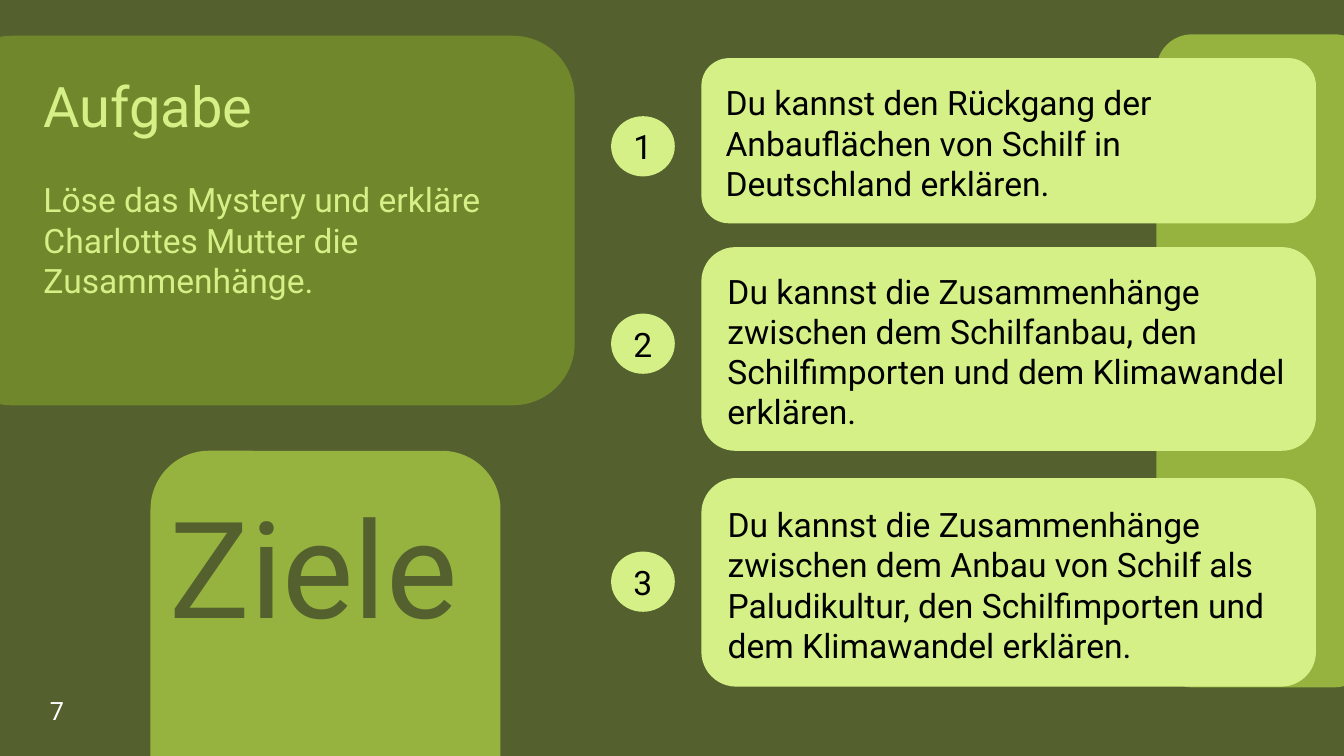
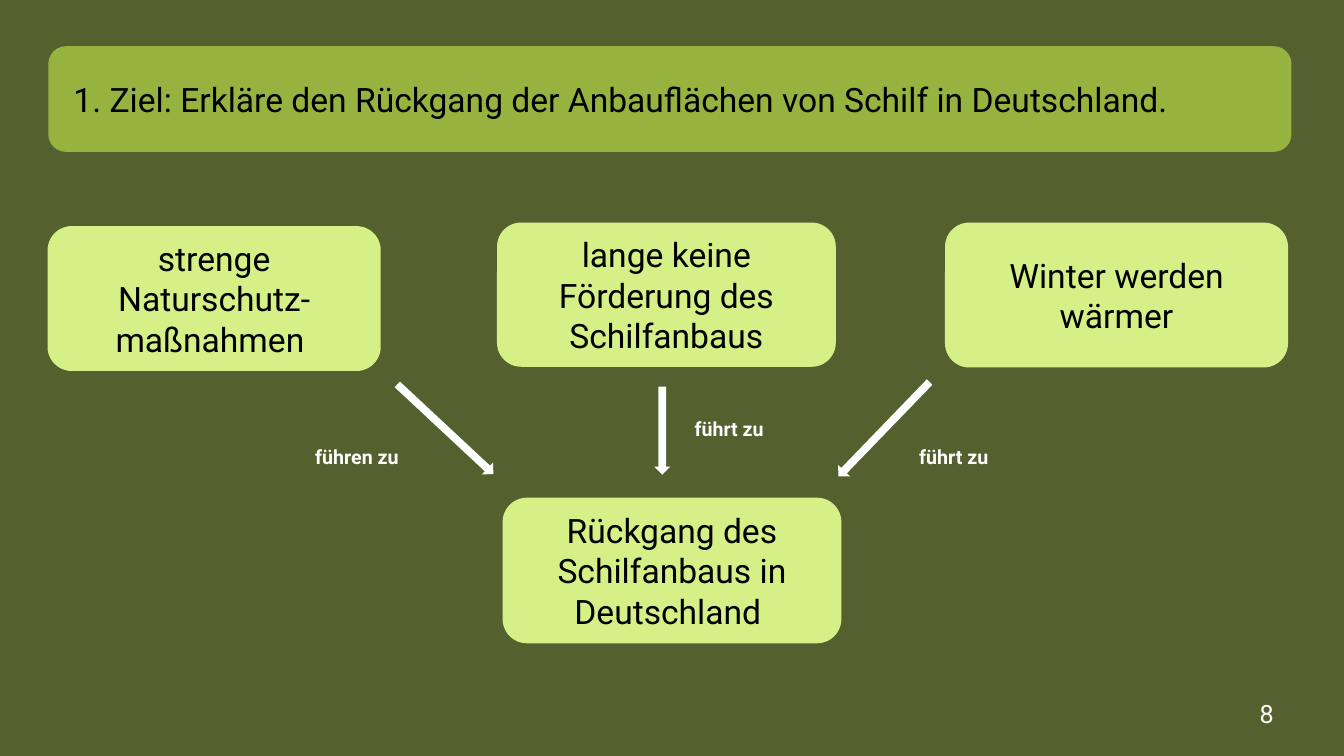
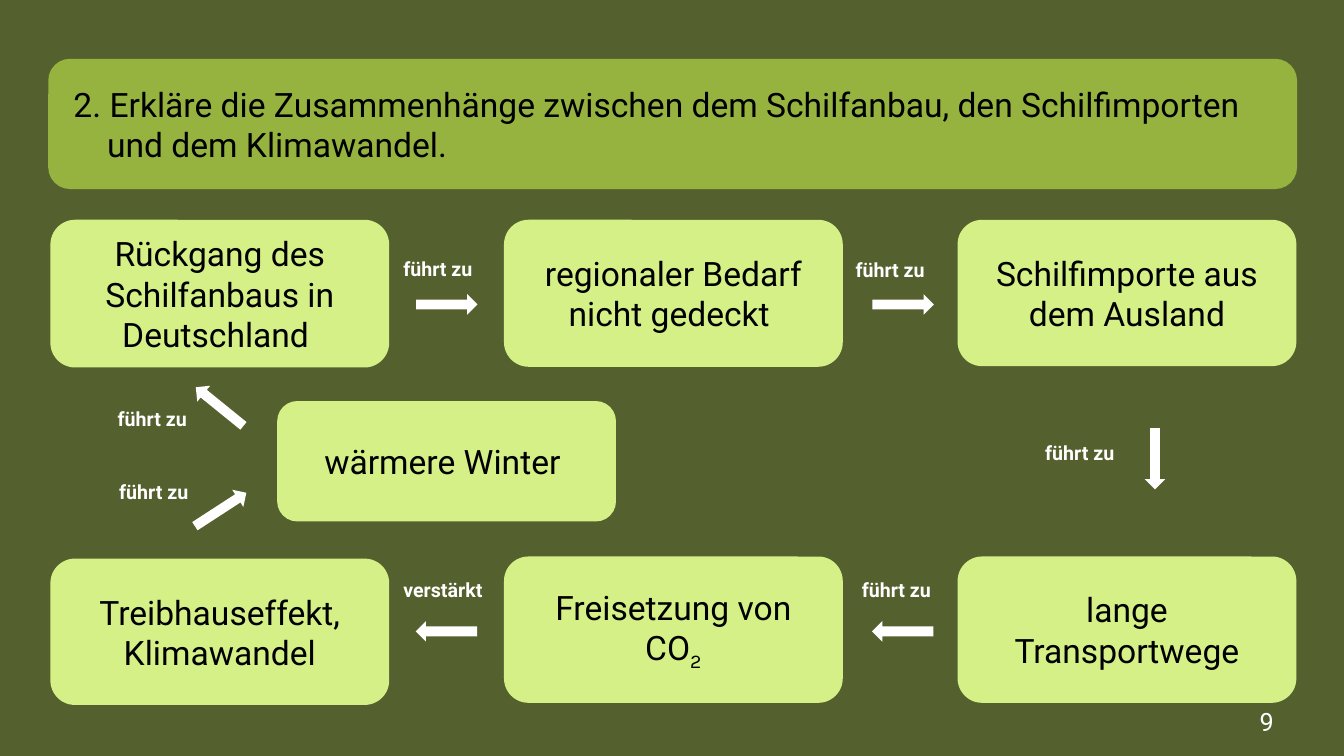
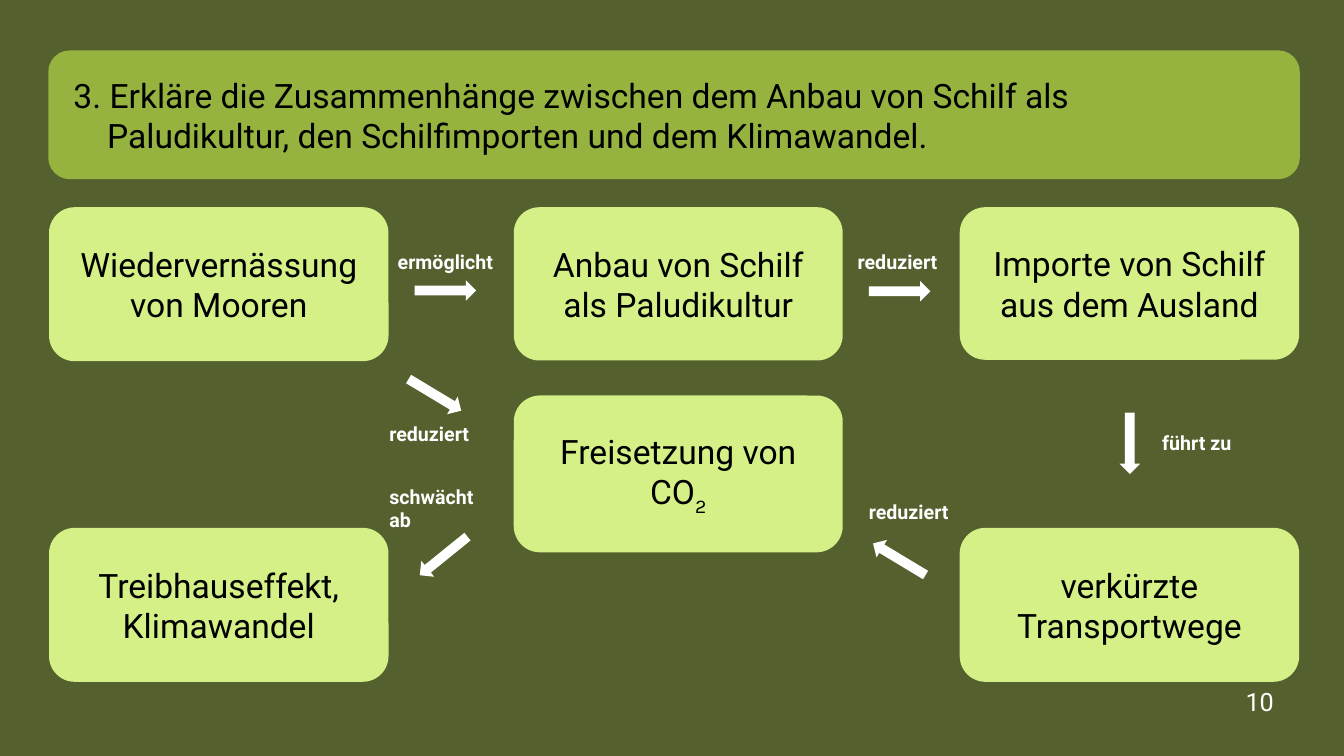
from pptx import Presentation
from pptx.dml.color import RGBColor
from pptx.enum import shapes, text
from pptx.oxml.xmlchemy import OxmlElement
from pptx.util import Pt

# Shared look
DARK = RGBColor(0x54, 0x61, 0x2E)
MOSS = RGBColor(0x70, 0x87, 0x2B)
LEAF = RGBColor(0x96, 0xB3, 0x40)
PALE = RGBColor(0xD5, 0xF0, 0x86)
BLACK = RGBColor(0, 0, 0)
WHITE = RGBColor(255, 255, 255)
FONT, SUBFONT = "Roboto", "Karla"
KIND = shapes.MSO_SHAPE
LEFT, MID, RIGHT = text.PP_ALIGN.LEFT, text.PP_ALIGN.CENTER, text.PP_ALIGN.RIGHT
TOP, HALF = text.MSO_ANCHOR.TOP, text.MSO_ANCHOR.MIDDLE
# Margins: plain text, band title, box, goal card
PAD = (7.2, 3.6, 7.2, 3.6)
INSET = (18, 0, 18, 0)
BOXPAD = (12, 0, 12, 0)
GOALPAD = (11.5, 3, 6, 0)

# Goals slide: text, card top and height, badge top
TASK = "Löse das Mystery und erkläre Charlottes Mutter die Zusammenhänge."
GOALS = [
    ("Du kannst den Rückgang der Anbauflächen von Schilf in Deutschland erklären.",
     41.5, 118, 83),
    ("Du kannst die Zusammenhänge zwischen dem Schilfanbau, den Schilfimporten "
     "und dem Klimawandel erklären.", 176.5, 145.5, 224),
    ("Du kannst die Zusammenhänge zwischen dem Anbau von Schilf als Paludikultur, "
     "den Schilfimporten und dem Klimawandel erklären.", 341.5, 149, 394),
]

# Diagram slides; a tilde starts a subscript
# boxes: text, left, top, width, height
# arrows: centre x, centre y, turn, length; labels: text, left, top
COLS = [36 + 324 * i for i in range(3)]
CHARTS = [
    dict(
        title="1. Ziel: Erkläre den Rückgang der Anbauflächen von Schilf in Deutschland.",
        band=(34.5, 33, 888, 75.5), page=("8", 495),
        boxes=[
            ("strenge Naturschutz-maßnahmen ", 34, 161.5, 238, 103.5),
            ("lange keine Förderung des Schilfanbaus", 355, 159, 242, 103),
            ("Winter werden wärmer", 675, 159, 245, 103.5),
            ("Rückgang des Schilfanbaus in Deutschland ", 359, 355.5, 242, 104),
        ],
        thick=8,
        arrows=[(318, 306.5, 43, 92), (473, 307.5, 90, 61), (631.5, 306.5, 134, 92)],
        labels=[("führen zu", 218, 314), ("führt zu", 489, 294), ("führt zu", 649.5, 314)],
    ),
    dict(
        title="2. Erkläre die Zusammenhänge zwischen dem Schilfanbau, den Schilfimporten\v"
              "und dem Klimawandel.",
        band=(34.5, 42, 892, 93), page=("9", 501),
        boxes=[
            ("Rückgang des Schilfanbaus in Deutschland ", COLS[0], 157, 242, 105.5),
            ("regionaler Bedarf nicht gedeckt ", COLS[1], 157, 242, 105),
            ("Schilfimporte aus dem Ausland", COLS[2], 157, 242, 104.5),
            ("lange Transportwege", COLS[2], 397.5, 242, 104.5),
            ("Freisetzung von CO~2", COLS[1], 397.5, 242, 104.5),
            ("Treibhauseffekt, Klimawandel", COLS[0], 399, 242, 104.5),
            ("wärmere Winter ", 198, 286.5, 242, 86),
        ],
        thick=11,
        arrows=[(319, 217.5, 0, 42), (645, 217.5, 0, 42), (825, 327.5, 90, 42),
                (645, 451, 180, 42), (319, 451, 180, 42), (157.5, 364, 327, 42),
                (157, 290.5, 219, 42)],
        labels=[("führt zu", 281, 180), ("führt zu", 604, 180.5), ("führt zu", 739.5, 311.5),
                ("führt zu", 608.5, 409), ("verstärkt", 281, 409), ("führt zu", 78, 339),
                ("führt zu", 77, 287)],
    ),
    dict(
        title="3. Erkläre die Zusammenhänge zwischen dem Anbau von Schilf als\v"
              "Paludikultur, den Schilfimporten und dem Klimawandel.",
        band=(34.5, 36, 894, 92), page=("10", 487),
        boxes=[
            ("Wiedervernässung von Mooren", 35, 148, 242.5, 110),
            ("Anbau von Schilf als Paludikultur", 367, 148, 235, 109.5),
            ("Importe von Schilf aus dem Ausland", 685.5, 148, 242.5, 109),
            ("verkürzte Transportwege", 685.5, 377, 242.5, 110),
            ("Freisetzung von CO~2", 367, 282.5, 235, 112),
            ("Treibhauseffekt, Klimawandel", 35, 377, 242.5, 110),
        ],
        thick=11,
        arrows=[(318, 207.5, 0, 42), (642.5, 208, 0, 42), (807, 316.5, 90, 42),
                (642.5, 399.5, 211, 42), (310.5, 282, 31, 42), (317, 397, 141, 42)],
        labels=[("ermöglicht", 277, 175), ("reduziert", 605.5, 175), ("führt zu", 823, 304.5),
                ("reduziert", 613.5, 353.5), ("reduziert", 271, 297.5),
                ("schwächt\vab", 271, 342.5)],
    ),
]


def write(shape, words, size=24, ink=BLACK, align=LEFT, anchor=TOP, pad=PAD, bold=False):
    """Fill a shape with one styled paragraph."""
    frame = shape.text_frame
    frame.word_wrap = True
    frame.auto_size = text.MSO_AUTO_SIZE.NONE
    frame.vertical_anchor = anchor
    (frame.margin_left, frame.margin_top,
     frame.margin_right, frame.margin_bottom) = [Pt(v) for v in pad]
    main, _, sub = words.partition("~")
    frame.text = main
    para = frame.paragraphs[0]
    para.alignment = align
    if sub:
        para.add_run().text = sub
    for run in para.runs:
        font = run.font
        font.name, font.size, font.bold = FONT, Pt(size), bold
        font.color.rgb = ink
    if sub:
        font.name = SUBFONT
        font._element.set("baseline", "-25000")
    return para


def form(slide, kind, rect, fill):
    item = slide.shapes.add_shape(kind, *[Pt(v) for v in rect])
    item.shadow.inherit = False
    item.fill.solid()
    item.fill.fore_color.rgb = fill
    item.line.fill.background()
    return item


def card(slide, rect, fill=PALE):
    item = form(slide, KIND.ROUNDED_RECTANGLE, rect, fill)
    item.adjustments[0] = 0.167
    return item


def note(slide, words, rect, **style):
    write(slide.shapes.add_textbox(*[Pt(v) for v in rect]), words, **style)


def title(slide, words, rect, **style):
    """Place the title placeholder in front of what is drawn so far."""
    item = slide.shapes.title
    item.left, item.top, item.width, item.height = [Pt(v) for v in rect]
    slide.shapes._spTree.append(item._element)
    return write(item, words, **style)


def arrow(slide, x, y, turn, size, thick):
    item = form(slide, KIND.RIGHT_ARROW, (x - size / 2, y - thick / 2, size, thick), WHITE)
    item.rotation = turn
    item.line.color.rgb = WHITE
    item.line.width = Pt(1.5)
    # Sharp corners
    join = OxmlElement("a:miter")
    join.set("lim", "800000")
    item.line._get_or_add_ln().append(join)


def goals(slide):
    card(slide, (826, 24.5, 153, 466.5), LEAF)
    for num, (words, top, high, spot) in enumerate(GOALS, 1):
        write(card(slide, (501, top, 439, high)), words, anchor=HALF, pad=GOALPAD)
        badge = form(slide, KIND.FLOWCHART_CONNECTOR, (436.5, spot, 45.5, 43), PALE)
        write(badge, str(num), align=MID, anchor=HALF, pad=(0, 0, 0, 0))
    # Task and heading blocks
    card(slide, (107.5, 322, 250, 300), LEAF)
    card(slide, (-35.5, 25.5, 446, 264), MOSS)
    title(slide, "Aufgabe", (24, 47.5, 366, 60), size=40, ink=PALE)
    note(slide, TASK, (24, 124.5, 366, 100), ink=PALE)
    note(slide, "Ziele", (114, 342, 252, 130), size=96, ink=DARK)
    note(slide, "7", (28.5, 493, 34.5, 30), size=18, ink=WHITE)


def chart(slide, data):
    card(slide, data["band"], LEAF)
    para = title(slide, data["title"], data["band"], anchor=HALF, pad=INSET)
    # Hanging indent behind the number
    props = para._p.get_or_add_pPr()
    props.set("marL", str(Pt(24)))
    props.set("indent", str(-Pt(24)))
    for words, *rect in data["boxes"]:
        write(card(slide, rect), words, align=MID, anchor=HALF, pad=BOXPAD)
    for spot in data["arrows"]:
        arrow(slide, *spot, data["thick"])
    for words, left, top in data["labels"]:
        high = 41 if "\v" in words else 24.5
        note(slide, words, (left, top, 95, high), size=14, ink=WHITE, bold=True)
    num, top = data["page"]
    note(slide, num, (867, top, 50, 30), size=18, ink=WHITE, align=RIGHT)


def main():
    deck = Presentation()
    deck.slide_width, deck.slide_height = Pt(960), Pt(540)
    ground = deck.slide_master.background.fill
    ground.solid()
    ground.fore_color.rgb = DARK
    plain = deck.slide_layouts.get_by_name("Title Only")
    goals(deck.slides.add_slide(plain))
    for data in CHARTS:
        chart(deck.slides.add_slide(plain), data)
    deck.save("out.pptx")


if __name__ == "__main__":
    main()
